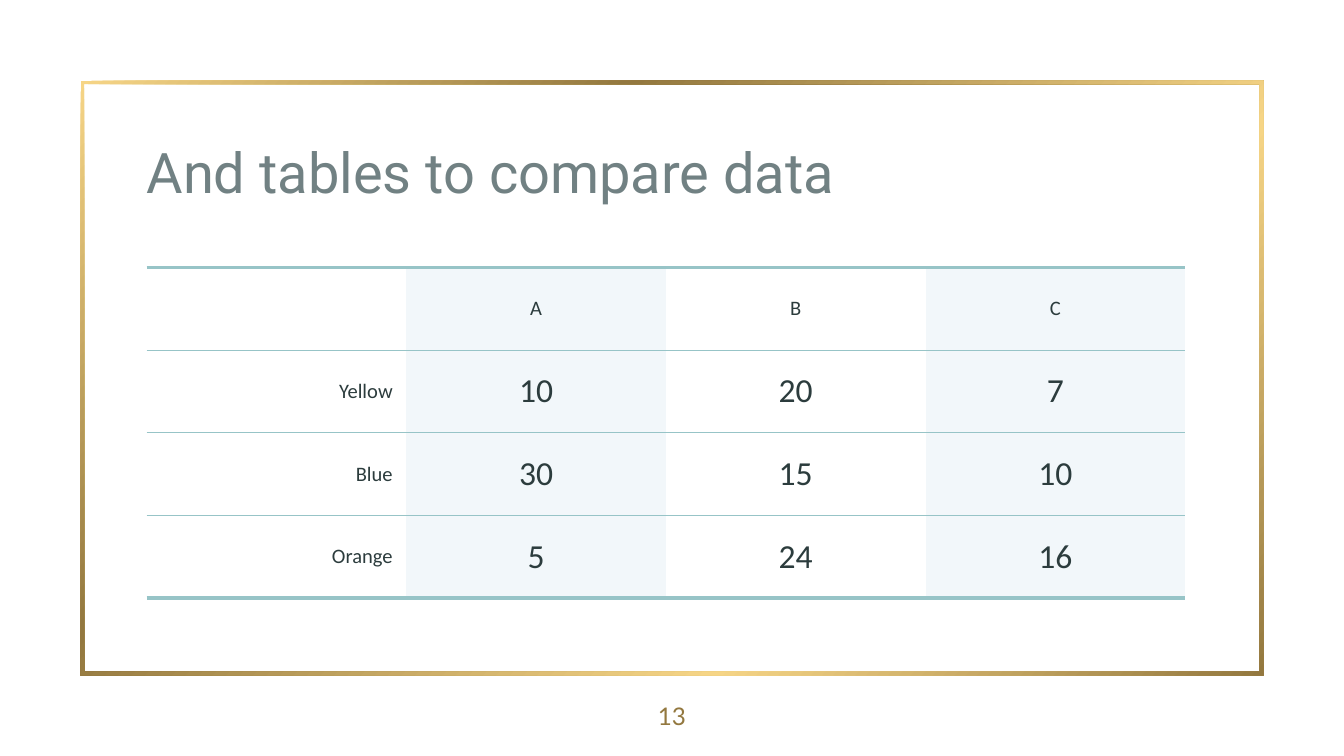
"""Build a slide with a gold frame and a comparison table."""
from dataclasses import dataclass

from lxml import etree
from pptx import Presentation
from pptx.dml.color import RGBColor
from pptx.enum import shapes, text
from pptx.oxml import ns
from pptx.util import Inches, Pt


@dataclass(frozen=True)
class Theme:
    white: str = "FFFFFF"
    light_gold: str = "F6D586"
    dark_gold: str = "93783F"
    title: str = "718183"
    ink: str = "2C3C3D"
    rule: str = "97C4C7"
    band: str = "F2F7FA"
    title_size: float = 30
    label_size: float = 11
    value_size: float = 18
    number_size: float = 13
    thin: float = 0.75
    thick: float = 2.25


theme = Theme()


def add_run(paragraph, content, font_name, size, color):
    run = paragraph.add_run()
    run.text = content
    run.font.name = font_name
    run.font.size = Pt(size)
    run.font.color.rgb = RGBColor.from_string(color)


def add_element(parent, tag, **attributes):
    values = {name: str(value) for name, value in attributes.items()}
    return etree.SubElement(parent, ns.qn(tag), values)


presentation = Presentation()
presentation.slide_width = Inches(10)
presentation.slide_height = Inches(10) * 9 // 16
slide = presentation.slides.add_slide(presentation.slide_layouts[5])
slide.background.fill.solid()
slide.background.fill.fore_color.rgb = RGBColor.from_string(theme.white)

margin = Inches(0.6)
frame = slide.shapes.add_shape(
    shapes.MSO_SHAPE.FRAME,
    margin,
    margin,
    presentation.slide_width - 2 * margin,
    presentation.slide_height - 2 * margin,
)
frame.shadow.inherit = False
frame.adjustments[0] = 0.006
frame.line.fill.background()
frame.fill.gradient()
frame.fill.gradient_angle = 315
stops = frame.fill._fill._gradFill.find(ns.qn("a:gsLst"))
for stop in list(stops):
    stops.remove(stop)
gradient = zip((0, 31, 69, 100), (theme.light_gold, theme.dark_gold) * 2)
for position, color in gradient:
    stop = add_element(stops, "a:gs", pos=position * 1000)
    add_element(stop, "a:srgbClr", val=color)

title = slide.shapes.title
title.left, title.top = Inches(1.09), Inches(1.08)
title.width, title.height = Inches(7.82), Inches(0.43)
title_frame = title.text_frame
title_frame.auto_size = text.MSO_AUTO_SIZE.NONE
title_frame.vertical_anchor = text.MSO_ANCHOR.TOP
title_paragraph = title_frame.paragraphs[0]
title_paragraph.alignment = text.PP_ALIGN.LEFT
title_paragraph.line_spacing = 0.9
add_run(title_paragraph, "And tables to compare data", "Roboto", theme.title_size, theme.title)

rows = [
    ("", "A", "B", "C"),
    ("Yellow", "10", "20", "7"),
    ("Blue", "30", "15", "10"),
    ("Orange", "5", "24", "16"),
]
table = slide.shapes.add_table(
    len(rows), len(rows[0]), Inches(1.09), Inches(1.99), Inches(7.73), Inches(2.46)
).table
table.first_row = False
table.horz_banding = False

for row_index, row in enumerate(rows):
    for column_index, content in enumerate(row):
        cell = table.cell(row_index, column_index)
        cell.vertical_anchor = text.MSO_ANCHOR.MIDDLE
        cell.margin_left = cell.margin_right = Inches(0.1)
        cell.margin_top = cell.margin_bottom = Inches(0.07)

        properties = cell._tc.get_or_add_tcPr()
        top = theme.thick if row_index == 0 else theme.thin
        bottom = theme.thick if row_index == len(rows) - 1 else theme.thin
        for tag, width in (("a:lnL", 0), ("a:lnR", 0), ("a:lnT", top), ("a:lnB", bottom)):
            border = add_element(properties, tag, w=Pt(width))
            if width:
                add_element(add_element(border, "a:solidFill"), "a:srgbClr", val=theme.rule)
            else:
                add_element(border, "a:noFill")

        if column_index % 2:
            cell.fill.solid()
            cell.fill.fore_color.rgb = RGBColor.from_string(theme.band)
        else:
            cell.fill.background()

        paragraph = cell.text_frame.paragraphs[0]
        paragraph.alignment = text.PP_ALIGN.CENTER if column_index else text.PP_ALIGN.RIGHT
        size = theme.value_size if row_index and column_index else theme.label_size
        if content:
            add_run(paragraph, content, "Calibri", size, theme.ink)

number = slide.shapes.add_textbox(
    Inches(4.7), presentation.slide_height - margin, margin, margin
)
for box in (title_frame, number.text_frame):
    box.word_wrap = True
    box.margin_left = box.margin_right = box.margin_top = box.margin_bottom = Inches(0)
number.text_frame.vertical_anchor = text.MSO_ANCHOR.MIDDLE
number_paragraph = number.text_frame.paragraphs[0]
number_paragraph.alignment = text.PP_ALIGN.CENTER
add_run(number_paragraph, "13", "Lato", theme.number_size, theme.dark_gold)

presentation.save("out.pptx")
